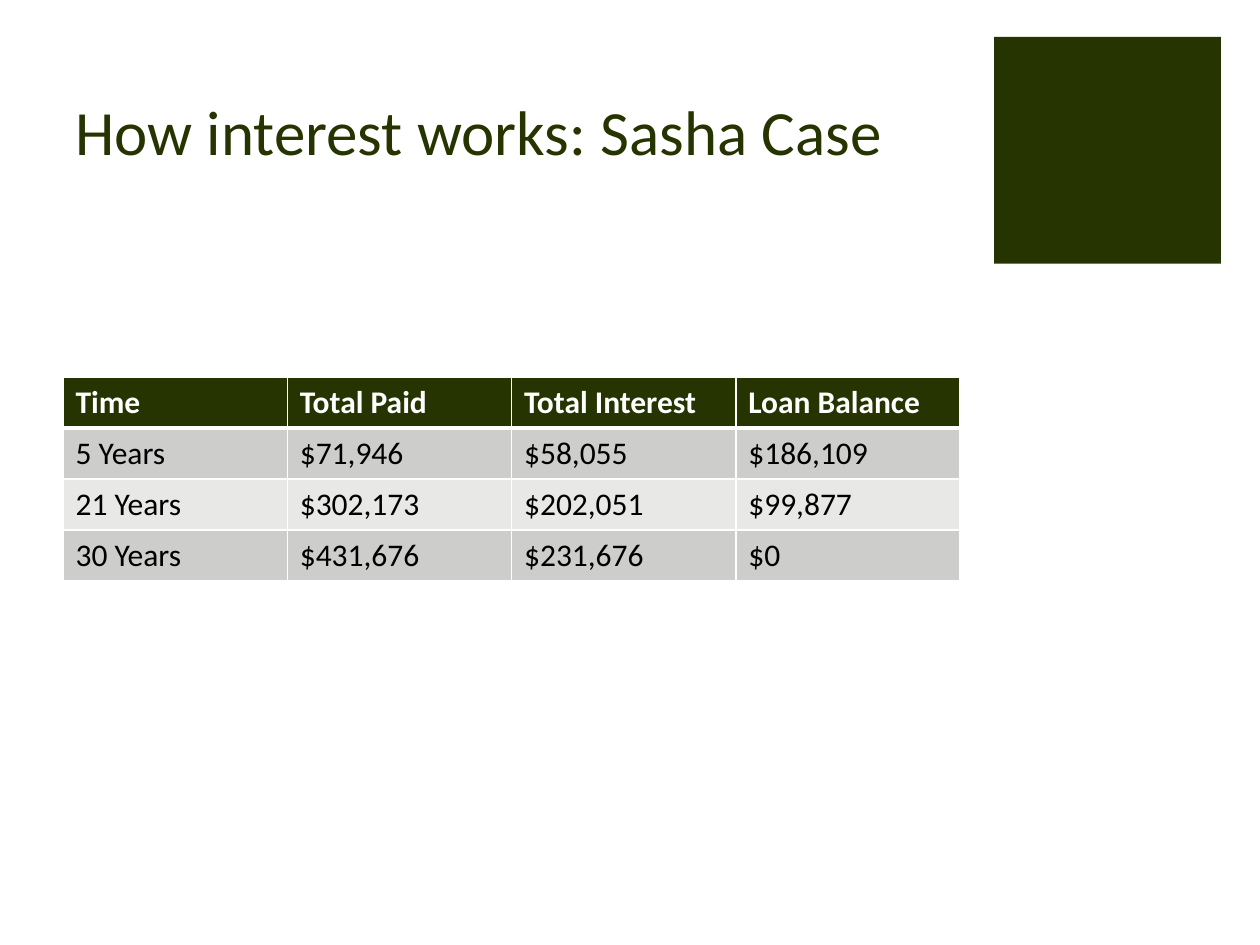
from lxml import etree
from pptx import Presentation
from pptx.dml.color import RGBColor
from pptx.enum.shapes import MSO_SHAPE
from pptx.enum.text import MSO_ANCHOR
from pptx.oxml.ns import qn
from pptx.util import Inches, Pt

RECT = MSO_SHAPE.RECTANGLE
BOTTOM = MSO_ANCHOR.BOTTOM
GREEN, WHITE, BLACK = "263401", "FFFFFF", "000000"
BANDS = ("CDCECC", "E8E8E7")
LEFT, WIDE = 0.05, 0.712
ROWS = (
    ("Time", "Total Paid", "Total Interest", "Loan Balance"),
    ("5 Years", "$71,946", "$58,055", "$186,109"),
    ("21 Years", "$302,173", "$202,051", "$99,877"),
    ("30 Years", "$431,676", "$231,676", "$0"),
)


def tint(code):
    """Turn a hex string into a colour."""
    return RGBColor.from_string(code)


class Deck:
    """Hold the style and the current slide; lengths are shares of its size."""

    def __init__(self, font, wide, high):
        """Start a deck with one blank slide."""
        self.font = font
        self.show = Presentation()
        self.wide, self.high = Inches(wide), Inches(high)
        self.show.slide_width, self.show.slide_height = self.wide, self.high
        self.slide = self.show.slides.add_slide(self.show.slide_layouts[6])

    def place(self, left, top, wide, high):
        """Turn shares into slide lengths."""
        return (int(left * self.wide), int(top * self.high),
                int(wide * self.wide), int(high * self.high))

    def label(self, frame, text, color, **style):
        """Put styled text in a frame."""
        para = frame.paragraphs[0]
        para.text = text
        font = para.runs[0].font
        for key, value in {"name": self.font, **style}.items():
            setattr(font, key, value)
        font.color.rgb = tint(color)

    def block(self, spot, color):
        """Draw a plain filled box."""
        shape = self.slide.shapes.add_shape(RECT, *self.place(*spot))
        shape.shadow.inherit = False
        shape.fill.solid()
        shape.fill.fore_color.rgb = tint(color)
        shape.line.fill.background()

    def title(self, spot, text, size):
        """Set the heading."""
        frame = self.slide.shapes.add_textbox(*self.place(*spot)).text_frame
        for key, value in {"word_wrap": True, "vertical_anchor": BOTTOM}.items():
            setattr(frame, key, value)
        self.label(frame, text, GREEN, size=Pt(size))

    def edge(self, cell, side, width):
        """Draw one white border of a cell."""
        line = etree.SubElement(cell._tc.get_or_add_tcPr(), qn(f"a:ln{side}"), w=str(Pt(width)))
        fill = etree.SubElement(line, qn("a:solidFill"))
        etree.SubElement(fill, qn("a:srgbClr"), val=WHITE)

    def table(self, spot, rows, size):
        """Draw a banded table with a dark head row."""
        grid = self.slide.shapes.add_table(len(rows), len(rows[0]), *self.place(*spot)).table
        for r, row in enumerate(rows):
            head = r == 0
            for c, text in enumerate(row):
                cell = grid.cell(r, c)
                sides = {"L": 1, "R": 1, "T": 3 if r == 1 else 1, "B": 3 if head else 1}
                for side, width in sides.items():
                    self.edge(cell, side, width)
                cell.fill.solid()
                cell.fill.fore_color.rgb = tint(GREEN if head else BANDS[(r - 1) % 2])
                self.label(cell.text_frame, text, WHITE if head else BLACK,
                           size=Pt(size), bold=head)


def main():
    """Build and save the slide."""
    deck = Deck("Calibri", 10, 7.5)
    deck.block((0.789, 0.039, 0.18, 0.24), GREEN)
    deck.title((LEFT, 0.035, WIDE, 0.149), "How interest works: Sasha Case", 36)
    deck.table((LEFT, 0.399, WIDE, 0.216), ROWS, 18)
    deck.show.save("out.pptx")


if __name__ == "__main__":
    main()
